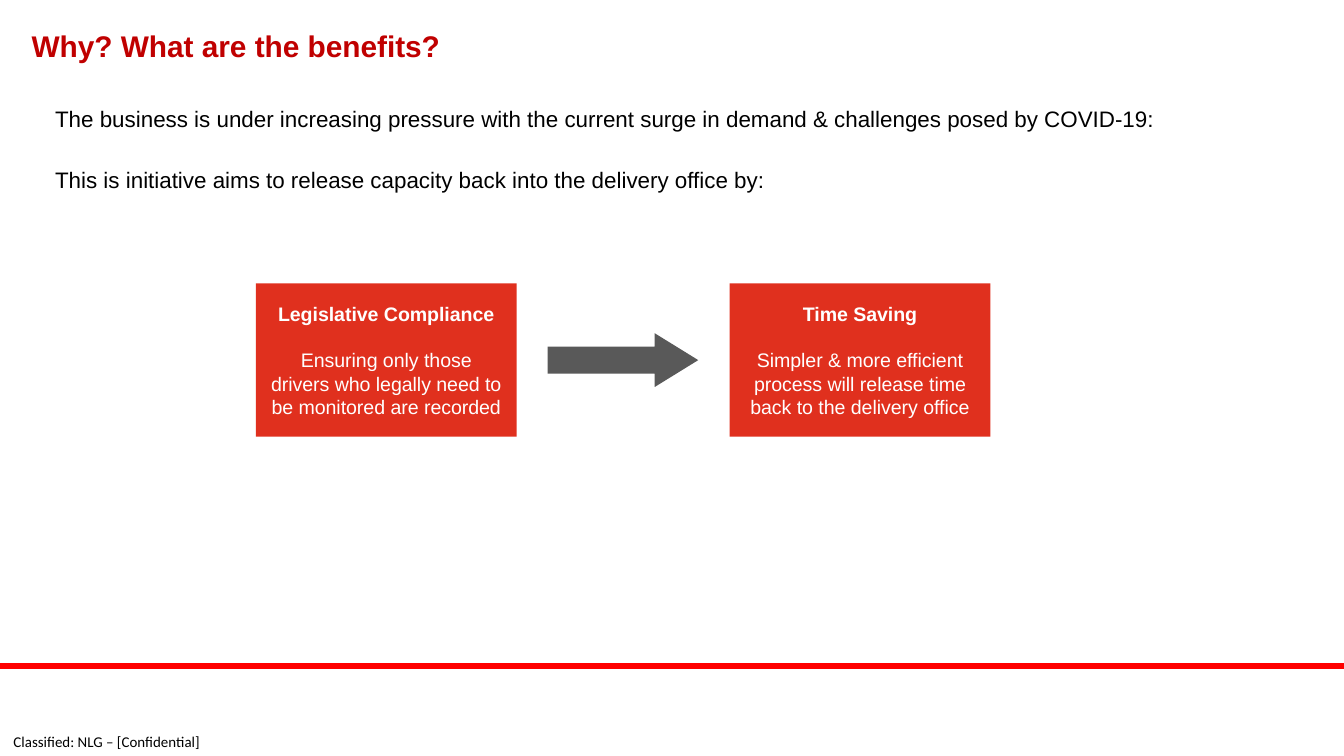
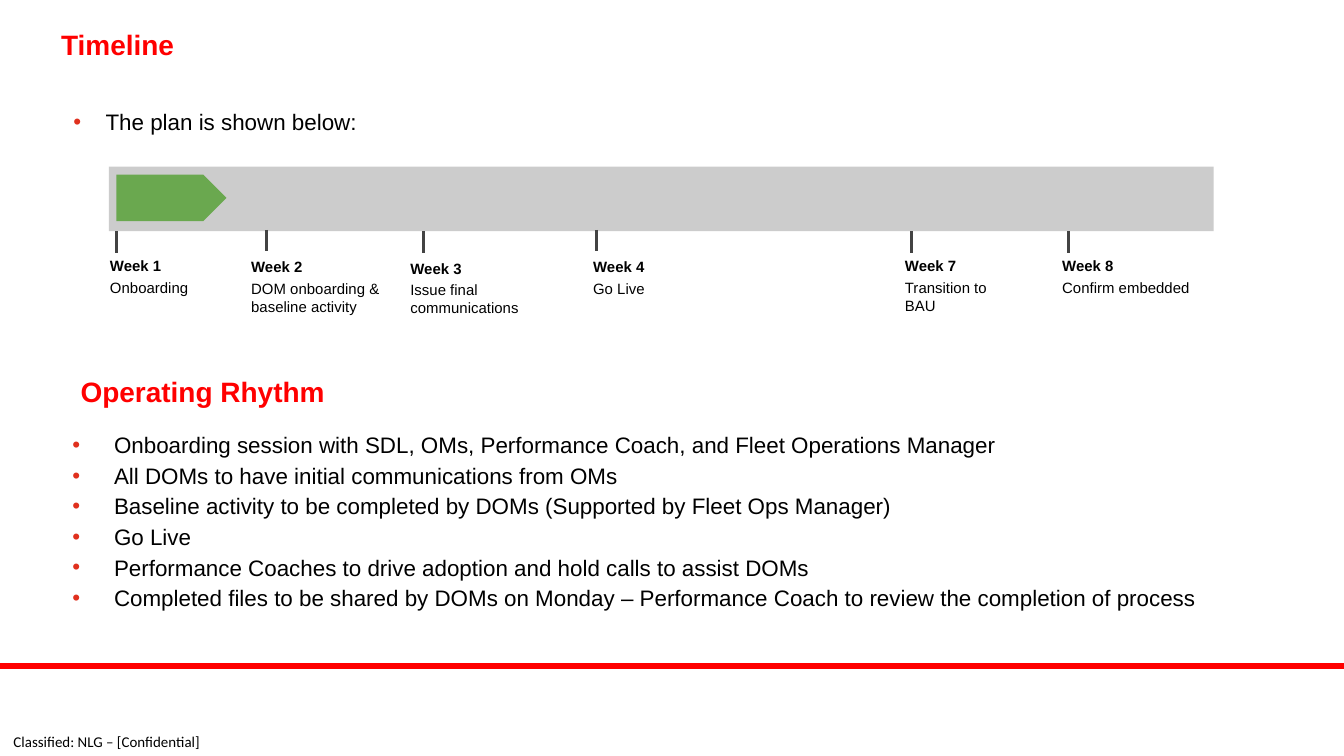
from lxml.etree import SubElement as Sub
from pptx import Presentation
from pptx.dml.color import RGBColor as Rgb
from pptx.enum.shapes import MSO_CONNECTOR as Conn, MSO_SHAPE as Geo
from pptx.enum.text import MSO_ANCHOR as Anchor, MSO_AUTO_SIZE as Fit, PP_ALIGN as Align
from pptx.oxml.ns import qn
from pptx.util import Pt

# 200 px make an inch
SCALE = 4572
WIDE, HIGH = 2000, 1125
RED, DEEP, BRICK = "FF0000", "C00000", "E0301E"
BLACK, WHITE = "000000", "FFFFFF"
GREY, DARK, TICK, GREEN = "CCCCCC", "595959", "434343", "6AA84F"


def px(*nums):
    return [num * SCALE for num in nums]


def tint(part, code):
    """Colour a fill or a font."""
    if hasattr(part, "solid"):
        part.solid()
        part = part.fore_color
    else:
        part = part.color
    part.rgb = Rgb.from_string(code)


def dot(para, indent):
    """Give a paragraph a coloured bullet and a hanging indent."""
    props = para._p.get_or_add_pPr()
    props.set("marL", str(indent * SCALE))
    props.set("indent", str(-indent * SCALE))
    Sub(Sub(props, qn("a:buClr")), qn("a:srgbClr"), val=BRICK)
    Sub(props, qn("a:buFont"), typeface="Arial")
    Sub(props, qn("a:buChar"), char="•")


def write(shape, lines, size=12, color=BLACK, font="Arial", bold=False,
          lead=False, align=Align.LEFT, anchor=Anchor.TOP, pad=(20, 10),
          gap=0, pitch=None, bullet=None):
    """Fill a shape with paragraphs; lead makes only the first one bold."""
    frame = shape.text_frame
    frame.word_wrap = True
    frame.auto_size = Fit.NONE
    frame.vertical_anchor = anchor
    frame.margin_left = frame.margin_right = pad[0] * SCALE
    frame.margin_top = frame.margin_bottom = pad[1] * SCALE
    for num, line in enumerate(lines):
        para = frame.add_paragraph() if num else frame.paragraphs[0]
        if bullet:
            dot(para, bullet)
        para.alignment = align
        para.space_before = Pt(gap if num else 0)
        if pitch:
            para.line_spacing = pitch
        run = para.add_run()
        run.text = line
        run.font.name = font
        run.font.size = Pt(size)
        run.font.bold = bold or (lead and num == 0)
        tint(run.font, color)


class Deck:
    """Holds the shared style and the current slide."""

    head = dict(bold=True, pad=(0, 0), pitch=0.9)

    def __init__(self):
        self.file = Presentation()
        self.file.slide_width, self.file.slide_height = px(WIDE, HIGH)

    def page(self, title, box, **style):
        layout = self.file.slide_layouts.get_by_name("Title Only")
        self.slide = self.file.slides.add_slide(layout)
        self.frame()
        name = self.slide.shapes.title
        name.left, name.top, name.width, name.height = px(*box)
        write(name, [title], **self.head, **style)

    def frame(self):
        # Footer band, red rule and classification
        self.shape((0, 998, WIDE, 127), WHITE)
        self.line((0, 991, WIDE, 991), RED, 3.5)
        self.text((0, 1083, 318, 42), ["Classified: NLG – [Confidential]"],
                  size=8, font="Calibri", align=Align.CENTER,
                  anchor=Anchor.MIDDLE, pad=(0, 0))

    def shape(self, box, fill, kind=Geo.RECTANGLE, adjust=()):
        item = self.slide.shapes.add_shape(kind, *px(*box))
        item.shadow.inherit = False
        tint(item.fill, fill)
        item.line.fill.background()
        for num, value in enumerate(adjust):
            item.adjustments[num] = value
        return item

    def line(self, ends, color, width):
        item = self.slide.shapes.add_connector(Conn.STRAIGHT, *px(*ends))
        tint(item.line.fill, color)
        item.line.width = Pt(width)
        Sub(item._element.spPr, qn("a:effectLst"))

    def text(self, box, lines, **style):
        item = self.slide.shapes.add_textbox(*px(*box))
        write(item, lines, **style)


def reasons(deck):
    deck.page("Why? What are the benefits?", (47, 47, 1818, 44), size=16, color=DEEP)
    deck.text((64, 138, 1872, 228), [
        "The business is under increasing pressure with the current surge in demand "
        "& challenges posed by COVID-19:",
        "This is initiative aims to release capacity back into the delivery office by:",
    ], pad=(18, 18), gap=18.5)

    # Two benefits joined by an arrow
    gains = [
        (381, "Legislative Compliance",
         "Ensuring only those drivers who legally need to be monitored are recorded"),
        (1086, "Time Saving",
         "Simpler & more efficient process will release time back to the delivery office"),
    ]
    for left, *lines in gains:
        card = deck.shape((left, 422, 388, 228), BRICK)
        write(card, lines, size=10.5, color=WHITE, lead=True, gap=12.5,
              align=Align.CENTER, anchor=Anchor.MIDDLE)
    deck.shape((815, 496, 224, 80), DARK, Geo.RIGHT_ARROW, (0.5, 0.81))


def timeline(deck):
    deck.page("Timeline", (91, 46, 1818, 64), size=15, color=RED)
    deck.text((91, 143, 1818, 124), ["The plan is shown below:"],
              pad=(18, 18), bullet=48)

    # Track and progress
    deck.shape((162, 248, 1644, 96), GREY)
    deck.shape((173, 260, 164, 69), GREEN, Geo.PENTAGON, (0.5,))

    # Weeks: tick x and y, label box, wording
    weeks = [
        (174, 344, (144, 362, 194, 152), "Week 1", "Onboarding"),
        (396, 342, (354, 364, 250, 152), "Week 2", "DOM onboarding & baseline activity"),
        (630, 344, (591, 366, 246, 152), "Week 3", "Issue final communications"),
        (888, 342, (863, 364, 232, 78), "Week 4", "Go Live"),
        (1356, 344, (1327, 362, 194, 78), "Week 7", "Transition to BAU"),
        (1590, 344, (1561, 362, 246, 78), "Week 8", "Confirm embedded"),
    ]
    for left, top, box, *lines in weeks:
        deck.line((left, top, left, top + 32), TICK, 1.5)
        deck.text(box, lines, size=8, lead=True, pad=(20, 20), gap=2)

    # Operating rhythm
    deck.text((120, 563, 492, 64), ["Operating Rhythm"], size=15, color=RED, **deck.head)
    deck.text((88, 632, 1770, 290), [
        "Onboarding session with SDL, OMs, Performance Coach, and Fleet Operations Manager",
        "All DOMs to have initial communications from OMs",
        "Baseline activity to be completed by DOMs (Supported by Fleet Ops Manager)",
        "Go Live",
        "Performance Coaches to drive adoption and hold calls to assist DOMs",
        "Completed files to be shared by DOMs on Monday – Performance Coach to review "
        "the completion of process",
    ], gap=2, bullet=62)


def main():
    deck = Deck()
    reasons(deck)
    timeline(deck)
    deck.file.save("out.pptx")


if __name__ == "__main__":
    main()
